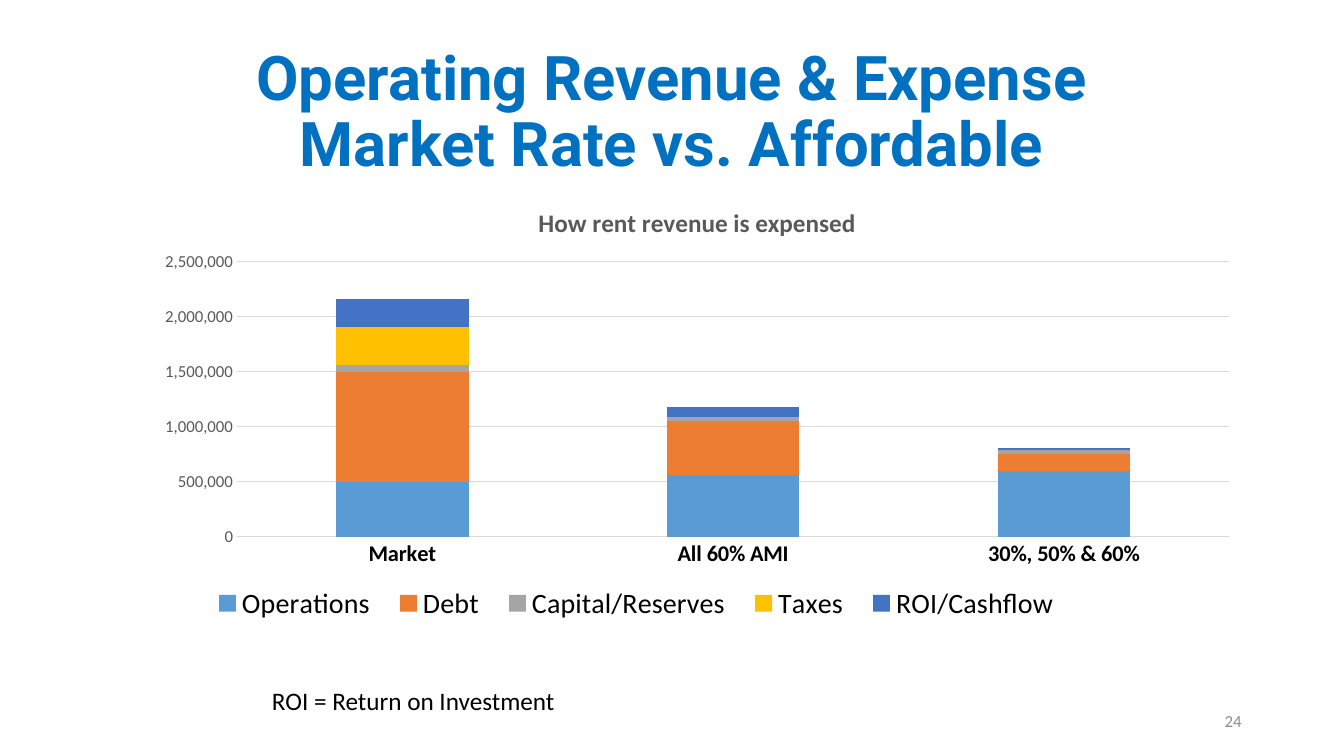
from lxml import etree
from pptx import Presentation
from pptx.chart.data import CategoryChartData as ChartData
from pptx.dml.color import RGBColor
from pptx.enum.chart import XL_CHART_TYPE as Kind
from pptx.enum.chart import XL_LEGEND_POSITION as Place
from pptx.enum.chart import XL_TICK_MARK as Tick
from pptx.enum.text import MSO_ANCHOR as Anchor
from pptx.enum.text import PP_ALIGN as Align
from pptx.oxml.ns import qn
from pptx.util import Pt

BLACK = RGBColor(0, 0, 0)
TITLE = RGBColor(0x00, 0x70, 0xC0)
GRAY = RGBColor(0x59, 0x59, 0x59)
PALE = RGBColor(0x8C, 0x8C, 0x8C)
GRID = RGBColor(0xD9, 0xD9, 0xD9)

GROUPS = ["Market", "All 60% AMI", "30%, 50% & 60%"]
COSTS = [
    ("Operations", (500000, 560000, 600000), RGBColor(0x5B, 0x9B, 0xD5)),
    ("Debt", (1000000, 490000, 150000), RGBColor(0xED, 0x7D, 0x31)),
    ("Capital/Reserves", (60000, 40000, 40000), RGBColor(0xA5, 0xA5, 0xA5)),
    ("Taxes", (350000, 0, 0), RGBColor(0xFF, 0xC0, 0x00)),
    ("ROI/Cashflow", (250000, 90000, 20000), RGBColor(0x44, 0x72, 0xC4)),
]


def style(font, size, color, bold=False, name="Calibri"):
    font.name, font.size, font.bold = name, Pt(size), bold
    font.color.rgb = color


def add_text(slide, box, lines, size, color, align=Align.LEFT,
             anchor=Anchor.TOP, **look):
    frame = slide.shapes.add_textbox(*map(Pt, box)).text_frame
    frame.word_wrap = True
    frame.vertical_anchor = anchor
    para = frame.paragraphs[0]
    para.alignment = align
    for index, line in enumerate(lines):
        if index:
            para.add_line_break()
        run = para.add_run()
        run.text = line
        style(run.font, size, color, **look)
    return para


def set_layout(part, index, box, inner=False):
    """Place a chart part by fractions of the chart's width and height."""
    for old in part.findall(qn("c:layout")):
        part.remove(old)
    layout = etree.Element(qn("c:layout"))
    manual = etree.SubElement(layout, qn("c:manualLayout"))
    items = [("layoutTarget", "inner")] if inner else []
    items += [("xMode", "edge"), ("yMode", "edge")]
    items += zip("xywh", box)
    for tag, value in items:
        etree.SubElement(manual, qn(f"c:{tag}")).set("val", str(value))
    part.insert(index, layout)


def style_axis(axis, size, color, bold=False):
    axis.major_tick_mark = axis.minor_tick_mark = Tick.NONE
    style(axis.tick_labels.font, size, color, bold)


def draw_line(line):
    line.color.rgb = GRID
    line.width = Pt(0.75)


def add_stack(slide, box):
    data = ChartData(number_format="#,##0")
    data.categories = GROUPS
    for name, values, _ in COSTS:
        data.add_series(name, values)
    frame = slide.shapes.add_chart(Kind.COLUMN_STACKED, *map(Pt, box), data)
    chart = frame.chart
    style(chart.font, 10, BLACK)

    chart.has_title = True
    run = chart.chart_title.text_frame.paragraphs[0].add_run()
    run.text = "How rent revenue is expensed"
    style(run.font, 18, GRAY, bold=True)

    plot = chart.plots[0]
    plot.gap_width, plot.overlap = 150, 100
    plot.vary_by_categories = False
    for series, (_, _, color) in zip(plot.series, COSTS):
        series.format.fill.solid()
        series.format.fill.fore_color.rgb = color

    style_axis(chart.category_axis, 16, BLACK, bold=True)
    draw_line(chart.category_axis.format.line)
    scale = chart.value_axis
    style_axis(scale, 12, GRAY)
    scale.minimum_scale, scale.maximum_scale = 0, 2500000
    scale.major_unit = 500000
    scale.format.line.fill.background()
    draw_line(scale.major_gridlines.format.line)

    chart.has_legend = True
    legend = chart.legend
    legend.position = Place.BOTTOM
    legend.include_in_layout = False
    style(legend.font, 20, BLACK)
    set_layout(legend._element, 1, (0.05, 0.89, 0.79, 0.1))
    area = chart._chartSpace.find(".//" + qn("c:plotArea"))
    set_layout(area, 0, (0.085, 0.17, 0.895, 0.62), inner=True)


def main():
    deck = Presentation()
    deck.slide_width, deck.slide_height = Pt(960), Pt(540)
    slide = deck.slides.add_slide(deck.slide_layouts[6])
    title = add_text(
        slide, (66, 28.75, 828, 104.4),
        ["Operating Revenue & Expense", "Market Rate vs. Affordable"],
        44, TITLE, Align.CENTER, Anchor.MIDDLE, bold=True, name="Roboto")
    title.line_spacing = 0.9
    add_stack(slide, (102, 133.2, 792, 316.8))
    add_text(slide, (678, 500.5, 216, 28.75), ["24"], 12, PALE,
             Align.RIGHT, Anchor.MIDDLE)
    add_text(slide, (187.2, 486, 630, 29), ["ROI = Return on Investment"],
             18, BLACK)
    deck.save("out.pptx")


if __name__ == "__main__":
    main()
